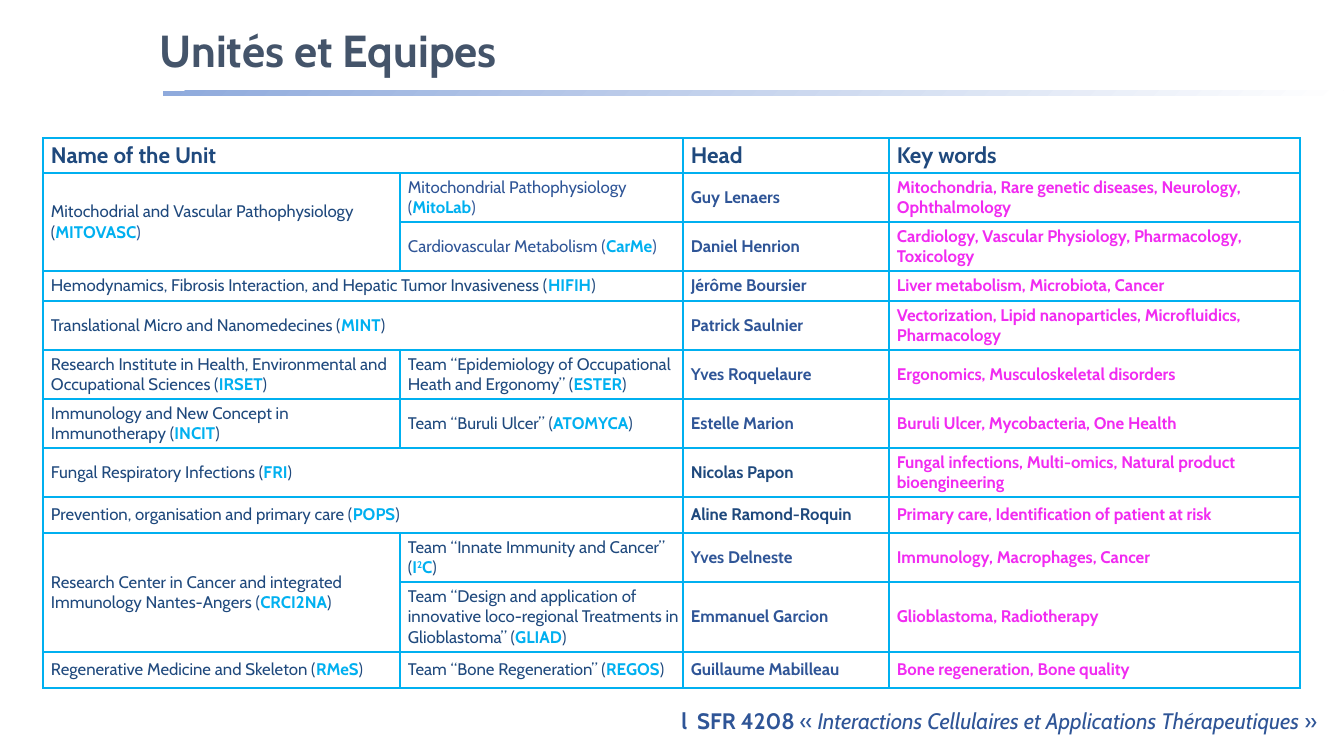
"""Build the slide listing research units, teams, heads and key words."""
from lxml.etree import SubElement
from pptx import Presentation
from pptx.dml.color import RGBColor
from pptx.enum.shapes import MSO_SHAPE
from pptx.enum.text import MSO_ANCHOR, PP_ALIGN
from pptx.oxml.ns import qn
from pptx.util import Emu, Pt

NAVY = RGBColor(0x1F, 0x49, 0x7D)
BLUE = RGBColor(0x2F, 0x55, 0x97)
CYAN = RGBColor(0x00, 0xB0, 0xF0)
PINK = RGBColor(0xF1, 0x2B, 0xF1)
SLATE = RGBColor(0x44, 0x54, 0x6A)
PERIWINKLE = RGBColor(0x8F, 0xAA, 0xDC)
WHITE = RGBColor(0xFF, 0xFF, 0xFF)


def px(n):
    return Emu(round(n * 914400 / 100.8))


def add_run(p, text, size=12, color=NAVY, bold=False, italic=False, baseline=0):
    r = p.add_run()
    r.text = text
    f = r.font
    f.name, f.size, f.bold, f.italic = "Cabin", Pt(size), bold, italic
    f.color.rgb = color
    if baseline:
        r._r.get_or_add_rPr().set("baseline", str(baseline))


prs = Presentation()
prs.slide_width, prs.slide_height = px(1344), px(756)
s = prs.slides.add_slide(prs.slide_layouts[6])

tf = s.shapes.add_textbox(px(595), px(702), px(732), px(37)).text_frame
tf.word_wrap = True
p = tf.paragraphs[0]
p.alignment = PP_ALIGN.RIGHT
add_run(p, "l  SFR 4208", size=16, color=BLUE, bold=True)
add_run(p, " « ", size=16, color=BLUE)
add_run(p, "Interactions Cellulaires et Applications Thérapeutiques",
        size=16, color=BLUE, italic=True)
add_run(p, " »", size=16, color=BLUE)

bar = s.shapes.add_shape(MSO_SHAPE.RECTANGLE, px(163), px(91), px(1181), px(5))
bar.shadow.inherit = False
bar.line.fill.background()
bar.fill.gradient()
bar.fill.gradient_angle = 315
for stop, color in zip(bar.fill.gradient_stops, (PERIWINKLE, WHITE)):
    stop.color.rgb = color

tf = s.shapes.add_textbox(px(150), px(20), px(1175), px(67)).text_frame
tf.word_wrap = True
tf.vertical_anchor = MSO_ANCHOR.MIDDLE
p = tf.paragraphs[0]
p.line_spacing = 0.9
add_run(p, "Unités et Equipes", size=32, color=SLATE, bold=True)

UNITS = [
    ("Name of the Unit", None, "Head", "Key words"),
    ("Mitochodrial and Vascular Pathophysiology (|MITOVASC|)",
     "Mitochondrial Pathophysiology (|MitoLab|)", "Guy Lenaers",
     "Mitochondria, Rare genetic diseases, Neurology, Ophthalmology"),
    (None, "Cardiovascular Metabolism (|CarMe|)", "Daniel Henrion",
     "Cardiology, Vascular Physiology, Pharmacology, Toxicology"),
    ("Hemodynamics, Fibrosis Interaction, and Hepatic Tumor Invasiveness (|HIFIH|)",
     None, "Jérôme Boursier", "Liver metabolism, Microbiota, Cancer"),
    ("Translational Micro and Nanomedecines (|MINT|)", None, "Patrick Saulnier",
     "Vectorization, Lipid nanoparticles, Microfluidics, Pharmacology"),
    ("Research Institute in Health, Environmental and Occupational Sciences (|IRSET|)",
     "Team “Epidemiology of Occupational Heath and Ergonomy” (|ESTER|)",
     "Yves Roquelaure", "Ergonomics, Musculoskeletal disorders"),
    ("Immunology and New Concept in Immunotherapy (|INCIT|)",
     "Team “Buruli Ulcer” (|ATOMYCA|)", "Estelle Marion",
     "Buruli Ulcer, Mycobacteria, One Health"),
    ("Fungal Respiratory Infections (|FRI|)", None, "Nicolas Papon",
     "Fungal infections, Multi-omics, Natural product bioengineering"),
    ("Prevention, organisation and primary care (|POPS|)", None,
     "Aline Ramond-Roquin", "Primary care, Identification of patient at risk"),
    ("Research Center in Cancer and integrated Immunology Nantes-Angers (|CRCI2NA|)",
     "Team “Innate Immunity and Cancer” (|I^2^C|)", "Yves Delneste",
     "Immunology, Macrophages, Cancer"),
    (None, "Team “Design and application of innovative loco-regional Treatments in "
     "Glioblastoma” (|GLIAD|)", "Emmanuel Garcion", "Glioblastoma, Radiotherapy"),
    ("Regenerative Medicine and Skeleton (|RMeS|)",
     "Team “Bone Regeneration” (|REGOS|)", "Guillaume Mabilleau",
     "Bone regeneration, Bone quality"),
]
COLUMN_WIDTHS = [357, 283, 206, 411]
ROW_HEIGHTS = [35, 49, 49, 30, 49, 49, 49, 49, 36, 49, 70, 36]
NAVY_HEADS = ("Nicolas Papon", "Aline Ramond-Roquin")
BLUE_TEAM_ROWS = (1, 2)

table = s.shapes.add_table(len(UNITS), len(COLUMN_WIDTHS), px(43), px(138),
                           px(sum(COLUMN_WIDTHS)), px(sum(ROW_HEIGHTS))).table
table.first_row = table.horz_banding = False
for column, width in zip(table.columns, COLUMN_WIDTHS):
    column.width = px(width)
for row, height in zip(table.rows, ROW_HEIGHTS):
    row.height = px(height)

for i, unit in enumerate(UNITS):
    for j, text in enumerate(unit):
        cell = table.cell(i, j)
        cell.vertical_anchor = MSO_ANCHOR.MIDDLE
        cell.margin_left, cell.margin_right = px(8), px(2)
        cell.margin_top = cell.margin_bottom = px(4)
        tcPr = cell._tc.get_or_add_tcPr()
        for side in ("a:lnL", "a:lnR", "a:lnT", "a:lnB"):
            ln = SubElement(tcPr, qn(side), w=str(Pt(1.5)))
            SubElement(SubElement(ln, qn("a:solidFill")), qn("a:srgbClr"), val=str(CYAN))
        cell.fill.background()
        if text is None:
            origin = table.cell(i, 0) if j == 1 else table.cell(i - 1, 0)
            origin.merge(cell)
            continue
        p = cell.text_frame.paragraphs[0]
        if i == 0:
            add_run(p, text, size=16, bold=True)
        elif j == 3:
            add_run(p, text, color=PINK, bold=True)
        elif j == 2:
            add_run(p, text, color=NAVY if text in NAVY_HEADS else BLUE, bold=True)
        else:
            before, acronym, after = text.split("|")
            blue_team = i in BLUE_TEAM_ROWS and j == 1
            add_run(p, before, color=BLUE if blue_team else NAVY)
            for k, part in enumerate(acronym.split("^")):
                add_run(p, part, color=CYAN, bold=True, baseline=30000 * (k % 2))
            add_run(p, after, color=BLUE if i in BLUE_TEAM_ROWS else NAVY)

prs.save("out.pptx")
